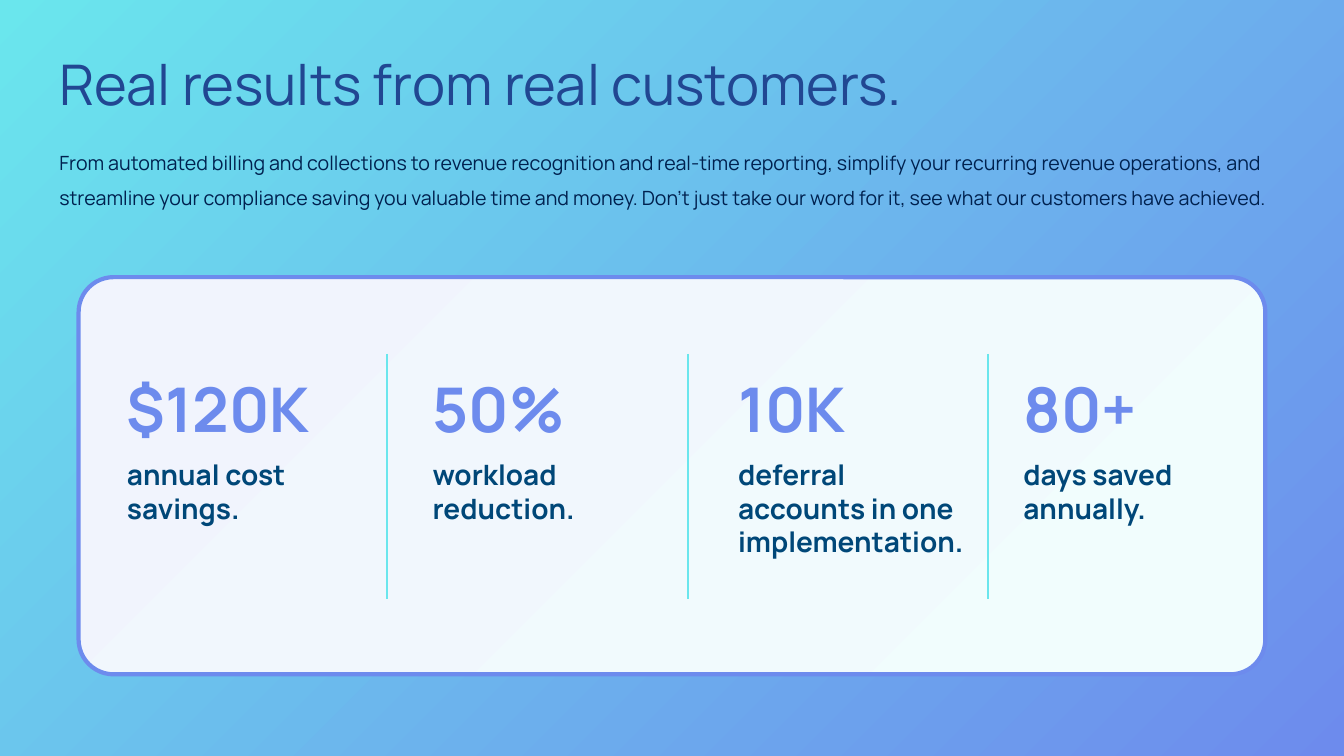
"""Build a slide of four customer results on a gradient background."""
from lxml import etree
from pptx import Presentation
from pptx.dml.color import RGBColor
from pptx.enum.shapes import MSO_CONNECTOR, MSO_SHAPE
from pptx.enum.text import MSO_ANCHOR
from pptx.oxml.ns import qn
from pptx.util import Inches, Pt

STRAIGHT = MSO_CONNECTOR.STRAIGHT
ROUNDED = MSO_SHAPE.ROUNDED_RECTANGLE
TOP, BOTTOM = MSO_ANCHOR.TOP, MSO_ANCHOR.BOTTOM

TITLE = "Real results from real customers."
INTRO = (
    "From automated billing and collections to revenue recognition and real-time "
    "reporting, simplify your recurring revenue operations, and streamline your "
    "compliance saving you valuable time and money. Don’t just take our word for it, "
    "see what our customers have achieved."
)
RESULTS = [
    {"figure": "$120K", "label": "annual cost savings.", "left": 1.26, "width": 2.1},
    {"figure": "50%", "label": "workload reduction.", "left": 4.29, "width": 2.13},
    {"figure": "10K", "label": "deferral accounts in one implementation.",
     "left": 7.32, "width": 2.32},
    {"figure": "80+", "label": "days saved annually.", "left": 10.15, "width": 1.93},
]
COLORS = {
    "aqua": "6AE6ED", "periwinkle": "6D8BED", "title": "214792", "intro": "00214F",
    "label": "004778", "card start": "F1F4FD", "card end": "F1FDFD",
}
FONT = "Manrope"
DIVIDER_LEFT, DIVIDER_STEP = 3.84, 2.98
DIVIDER_TOP, DIVIDER_BOTTOM = 3.51, 5.94


def color(name):
    """Return the named colour."""
    return RGBColor.from_string(COLORS[name])


def fill_diagonally(fill, start, end):
    """Fill with a gradient from the top left to the bottom right."""
    fill.gradient()
    fill.gradient_angle = 315
    for stop, name, position in zip(fill.gradient_stops, (start, end), (0, 1)):
        stop.color.rgb = color(name)
        stop.position = position


def add_text(page, text, place, size, tone, bold=False, anchor=TOP, inset=True):
    """Add a one-paragraph text box and return its paragraph."""
    box = page.shapes.add_textbox(*map(Inches, place))
    frame = box.text_frame
    frame.word_wrap = True
    frame.vertical_anchor = anchor
    if not inset:
        frame.margin_left = frame.margin_right = 0
        frame.margin_top = frame.margin_bottom = 0
    para = frame.paragraphs[0]
    span = para.add_run()
    span.text = text
    span.font.name = FONT
    span.font.size = Pt(size)
    span.font.bold = bold
    span.font.color.rgb = color(tone)
    return para


def add_card(page):
    """Add the rounded card behind the results."""
    card = page.shapes.add_shape(ROUNDED, *map(Inches, (0.78, 2.75, 11.77, 3.94)))
    card.shadow.inherit = False
    card.adjustments[0] = 0.088
    fill_diagonally(card.fill, "card start", "card end")
    card.line.color.rgb = color("periwinkle")
    card.line.width = Pt(3)


def add_divider(page, left):
    """Add a vertical line between two results."""
    divider = page.shapes.add_connector(
        STRAIGHT, *map(Inches, (left, DIVIDER_TOP, left, DIVIDER_BOTTOM)))
    divider.line.color.rgb = color("aqua")
    divider.line.width = Pt(1.5)
    etree.SubElement(divider._element.spPr, qn("a:effectLst"))


def main():
    """Build and save the deck."""
    deck = Presentation()
    deck.slide_width, deck.slide_height = Inches(13.33), Inches(7.5)
    page = deck.slides.add_slide(deck.slide_layouts[6])
    fill_diagonally(page.background.fill, "aqua", "periwinkle")
    add_card(page)
    title = add_text(page, TITLE, (0.49, 0.44, 12.56, 0.78), 40, "title", anchor=BOTTOM)
    title.line_spacing = 0.9
    intro = add_text(page, INTRO, (0.49, 1.33, 12.8, 1.13), 14, "intro")
    intro.line_spacing = 1.5
    for index in range(len(RESULTS) - 1):
        add_divider(page, DIVIDER_LEFT + index * DIVIDER_STEP)
    for result in RESULTS:
        left, width = result["left"], result["width"]
        add_text(page, result["figure"], (left, 3.68, width, 0.74), 44,
                 "periwinkle", bold=True, inset=False)
        add_text(page, result["label"], (left, 4.54, width, 0.67), 20,
                 "label", bold=True, inset=False)
    deck.save("out.pptx")


if __name__ == "__main__":
    main()
